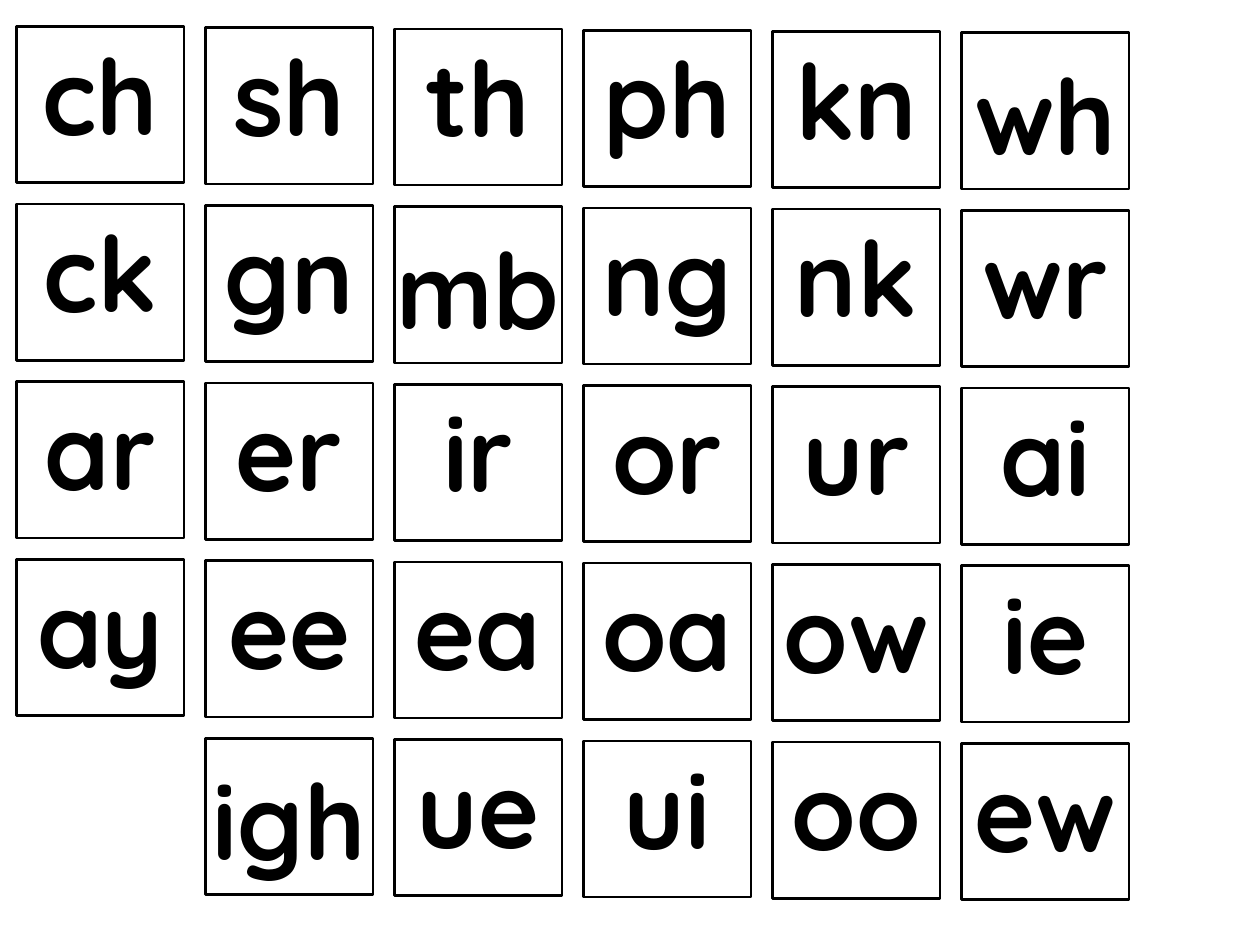
import pptx
import pptx.util
import pptx.dml.color
import pptx.enum.shapes
import pptx.enum.text

COLORS = {"ink": "000000", "paper": "FFFFFF"}

SOUND_ROWS = [
    "ch sh th ph kn wh",
    "ck gn mb ng nk wr",
    "ar er ir or ur ai",
    "ay ee ea oa ow ie",
    "igh ue ui oo ew",
]
COLUMNS = 6

GRID_LEFT, GRID_TOP = 0.13, 0.21
COLUMN_STEP, ROW_STEP = 1.5, 1.41
DROP_PER_COLUMN = 0.01
CARD_WIDTH, CARD_HEIGHT = 1.33, 1.24

TEXT_WIDTH, WIDE_TEXT_WIDTH = 1.55, 1.67
EXTRA_WIDE_TEXT = {"mb": 1.83, "igh": 1.95}
WIDE_SOUNDS = "wh nk ea ow ui oo ew".split()
SHORT_TEXT_HEIGHT, TALL_TEXT_HEIGHT = 1.24, 2.36
SHORT_SOUNDS = "sh th nk ar er ir or ur ai ie ui".split()
TEXT_SHIFT, LOW_TEXT_SHIFT = -0.02, 0.09
LOW_SOUNDS = "wh mb igh".split()


def color(name):
    return pptx.dml.color.RGBColor.from_string(COLORS[name])


def add_text(group, text, left, top, width, height, size=60, font="Quicksand", ink="ink"):
    box = group.shapes.add_textbox(*map(pptx.util.Inches, (left, top, width, height)))
    box.text_frame.word_wrap = True
    box.text_frame.auto_size = pptx.enum.text.MSO_AUTO_SIZE.SHAPE_TO_FIT_TEXT
    para = box.text_frame.paragraphs[0]
    para.alignment = pptx.enum.text.PP_ALIGN.CENTER
    span = para.add_run()
    span.text = text
    span.font.name = font
    span.font.size = pptx.util.Pt(size)
    span.font.bold = True
    span.font.color.rgb = color(ink)


deck = pptx.Presentation()
deck.slide_width = pptx.util.Inches(10)
deck.slide_height = pptx.util.Inches(7.5)
page = deck.slides.add_slide(deck.slide_layouts[6])

for row, line in enumerate(SOUND_ROWS):
    sounds = line.split()
    first_column = COLUMNS - len(sounds)
    for column, sound in enumerate(sounds, start=first_column):
        left = GRID_LEFT + column * COLUMN_STEP
        top = GRID_TOP + row * ROW_STEP + column * DROP_PER_COLUMN

        group = page.shapes.add_group_shape()
        card = group.shapes.add_shape(
            pptx.enum.shapes.MSO_SHAPE.RECTANGLE,
            *map(pptx.util.Inches, (left, top, CARD_WIDTH, CARD_HEIGHT)),
        )
        card.shadow.inherit = False
        card.fill.solid()
        card.fill.fore_color.rgb = color("paper")
        card.line.color.rgb = color("ink")
        card.line.width = pptx.util.Pt(1.5)

        usual_width = WIDE_TEXT_WIDTH if sound in WIDE_SOUNDS else TEXT_WIDTH
        text_width = EXTRA_WIDE_TEXT.get(sound, usual_width)
        text_height = SHORT_TEXT_HEIGHT if sound in SHORT_SOUNDS else TALL_TEXT_HEIGHT
        text_left = left + (CARD_WIDTH - text_width) / 2
        text_top = top + (LOW_TEXT_SHIFT if sound in LOW_SOUNDS else TEXT_SHIFT)
        add_text(group, sound, text_left, text_top, text_width, text_height)

deck.save("out.pptx")
